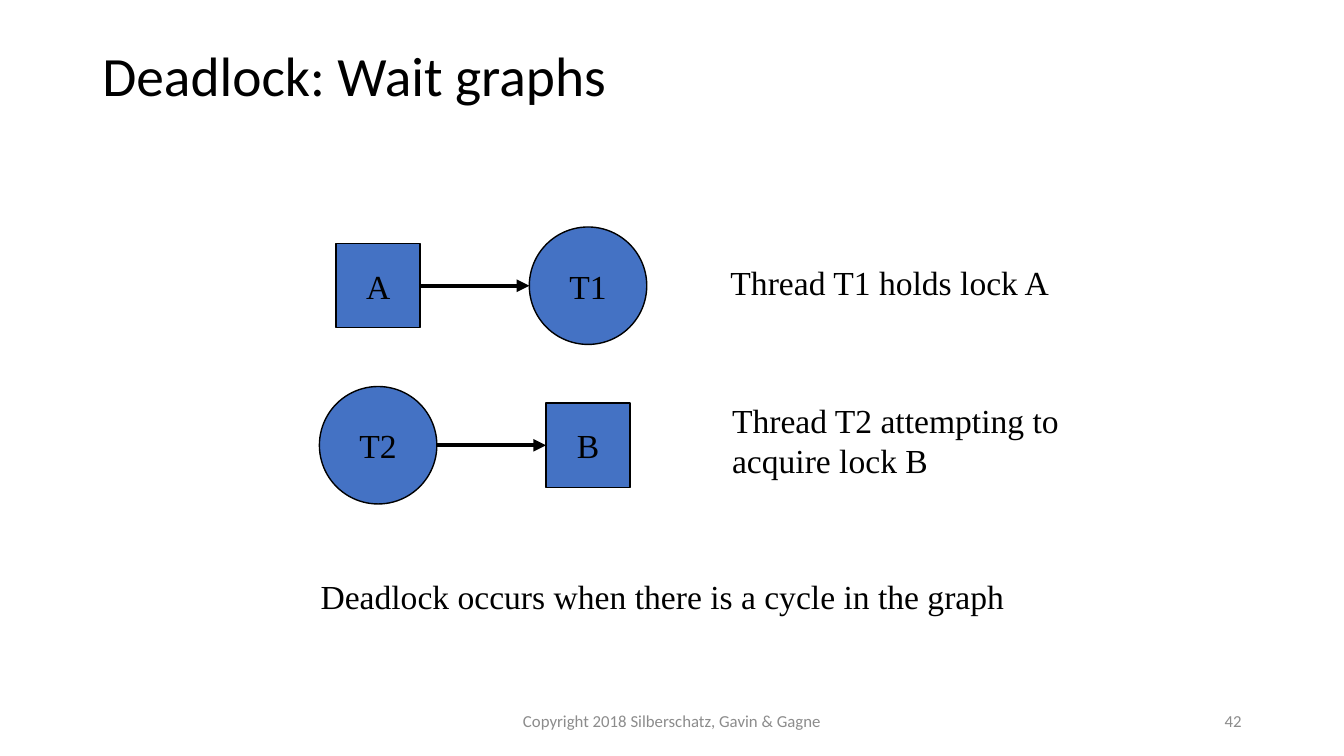
from dataclasses import dataclass

from lxml import etree
from pptx import Presentation
from pptx.dml.color import RGBColor
from pptx.enum.shapes import MSO_CONNECTOR, MSO_SHAPE
from pptx.enum.text import MSO_ANCHOR, MSO_AUTO_SIZE, PP_ALIGN
from pptx.oxml.ns import qn
from pptx.slide import Slide
from pptx.text.text import TextFrame
from pptx.util import Cm, Pt

STRAIGHT = MSO_CONNECTOR.STRAIGHT
LOCK, THREAD = MSO_SHAPE.RECTANGLE, MSO_SHAPE.OVAL
TOP, MIDDLE, BOTTOM = MSO_ANCHOR.TOP, MSO_ANCHOR.MIDDLE, MSO_ANCHOR.BOTTOM
LEFT, CENTER, RIGHT = PP_ALIGN.LEFT, PP_ALIGN.CENTER, PP_ALIGN.RIGHT
NO_RESIZE, GROW = MSO_AUTO_SIZE.NONE, MSO_AUTO_SIZE.SHAPE_TO_FIT_TEXT

COLORS = {"ink": "000000", "node": "4472C4", "footer": "8C8C8C"}
HEADING_FONT, BODY_FONT = "Calibri", "Times New Roman"
NODE_SIZES = {LOCK: 2.12, THREAD: 2.96}
SOURCE_X, TARGET_X = 9.6 - 0.07, 14.82


@dataclass(frozen=True)
class Node:
    label: str
    kind: MSO_SHAPE


@dataclass(frozen=True)
class Edge:
    """One row of the wait graph: an arrow from source to target."""
    source: Node
    target: Node
    center_y: float


@dataclass(frozen=True)
class Label:
    text: str
    left: float
    top: float
    width: float
    height: float
    size: float = 24
    font: str = BODY_FONT
    color: str = "ink"
    anchor: MSO_ANCHOR = TOP
    alignment: PP_ALIGN = LEFT
    line_spacing: float = 1.0
    wrap: bool = True
    auto_size: MSO_AUTO_SIZE = GROW


EDGES = [
    Edge(Node("A", LOCK), Node("T1", THREAD), 7.2),
    Edge(Node("T2", THREAD), Node("B", LOCK), 11.22),
]

FOOTER_FORMAT = {"top": 17.65, "height": 1.01, "size": 12, "font": HEADING_FONT,
                 "color": "footer", "anchor": MIDDLE, "auto_size": NO_RESIZE}
LABELS = [
    Label("Deadlock: Wait graphs", 2.33, 1.02, 29.21, 1.83, size=39.6,
          font=HEADING_FONT, anchor=BOTTOM, line_spacing=0.9, auto_size=NO_RESIZE),
    Label("Thread T1 holds lock A", 18.16, 6.48, 8.61, 1.28, wrap=False),
    Label("Thread T2 attempting to acquire lock B", 18.2, 9.95, 9.74, 2.31),
    Label("Deadlock occurs when there is a cycle in the graph", 7.83, 14.39, 19.05, 1.28),
    Label("Copyright 2018 Silberschatz, Gavin & Gagne", left=11.22, width=11.43,
          alignment=CENTER, **FOOTER_FORMAT),
    Label("42", left=23.92, width=7.62, alignment=RIGHT, **FOOTER_FORMAT),
]


def color(name: str) -> RGBColor:
    return RGBColor.from_string(COLORS[name])


def set_attributes(target: object, values: dict) -> None:
    for name, value in values.items():
        setattr(target, name, value)


def write_text(frame: TextFrame, label: Label) -> None:
    set_attributes(frame, {"word_wrap": label.wrap, "auto_size": label.auto_size,
                           "vertical_anchor": label.anchor})
    paragraph = frame.paragraphs[0]
    set_attributes(paragraph, {"alignment": label.alignment,
                               "line_spacing": label.line_spacing})
    run = paragraph.add_run()
    run.text = label.text
    set_attributes(run.font, {"name": label.font, "size": Pt(label.size)})
    run.font.color.rgb = color(label.color)


def add_label(slide: Slide, label: Label) -> None:
    box = slide.shapes.add_textbox(
        Cm(label.left), Cm(label.top), Cm(label.width), Cm(label.height))
    write_text(box.text_frame, label)


def add_node(slide: Slide, node: Node, center_x: float, center_y: float) -> None:
    size = NODE_SIZES[node.kind]
    left, top = center_x - size / 2, center_y - size / 2
    shape = slide.shapes.add_shape(node.kind, Cm(left), Cm(top), Cm(size), Cm(size))
    shape.shadow.inherit = False
    shape.fill.solid()
    shape.fill.fore_color.rgb = color("node")
    shape.line.color.rgb = color("ink")
    shape.line.width = Pt(1)
    write_text(shape.text_frame, Label(
        node.label, left, top, size, size, anchor=MIDDLE, alignment=CENTER,
        wrap=False, auto_size=NO_RESIZE))


def add_arrow(slide: Slide, start_x: float, end_x: float, y: float) -> None:
    arrow = slide.shapes.add_connector(STRAIGHT, Cm(start_x), Cm(y), Cm(end_x), Cm(y))
    arrow.line.color.rgb = color("ink")
    arrow.line.width = Pt(3)
    etree.SubElement(arrow.line._get_or_add_ln(), qn("a:tailEnd"), type="triangle")
    etree.SubElement(arrow._element.spPr, qn("a:effectLst"))


def add_edge(slide: Slide, edge: Edge) -> None:
    add_node(slide, edge.source, SOURCE_X, edge.center_y)
    add_node(slide, edge.target, TARGET_X, edge.center_y)
    add_arrow(slide, SOURCE_X + NODE_SIZES[edge.source.kind] / 2,
              TARGET_X - NODE_SIZES[edge.target.kind] / 2, edge.center_y)


def main() -> None:
    presentation = Presentation()
    set_attributes(presentation, {"slide_width": Cm(33.87), "slide_height": Cm(19.05)})
    slide = presentation.slides.add_slide(presentation.slide_layouts[6])
    for edge in EDGES:
        add_edge(slide, edge)
    for label in LABELS:
        add_label(slide, label)
    presentation.save("out.pptx")


if __name__ == "__main__":
    main()
